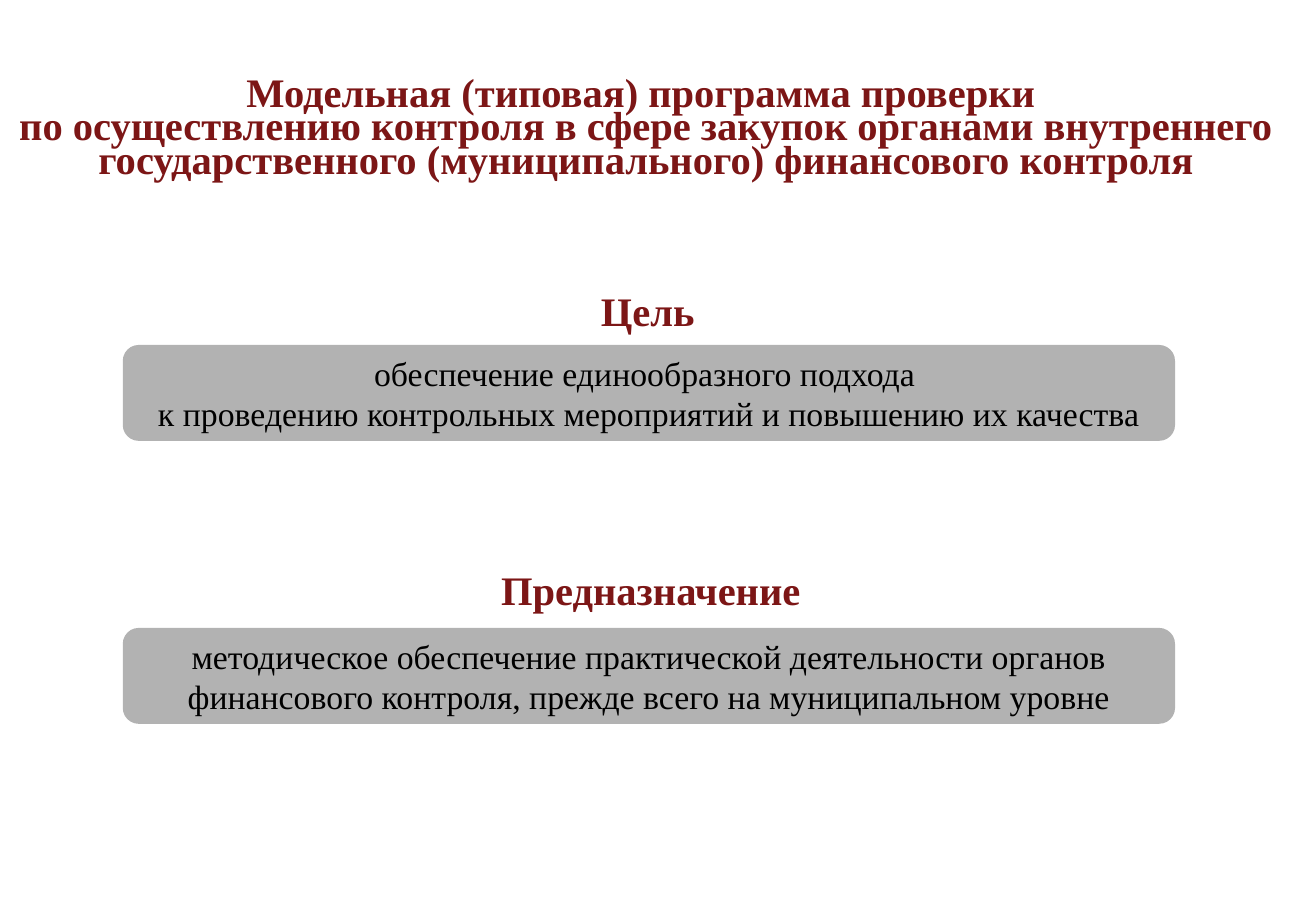
from pptx import Presentation, util as u
from pptx.dml.color import RGBColor
from pptx.enum import shapes, text

MAROON = RGBColor(0x7C, 0x16, 0x16)
GRAY = RGBColor(0xB2, 0xB2, 0xB2)
BLACK = RGBColor(0, 0, 0)

presentation = Presentation()
presentation.slide_width = u.Inches(10.83)
presentation.slide_height = u.Inches(7.5)
slide = presentation.slides.add_slide(presentation.slide_layouts[5])


def percent_box(left, top, width, height):
    sides = (presentation.slide_width, presentation.slide_height) * 2
    return [round(side * share / 100) for side, share in zip(sides, (left, top, width, height))]


def write(shape, lines, size, color, bold, align):
    frame = shape.text_frame
    frame.word_wrap = True
    for index, line in enumerate(lines):
        paragraph = frame.add_paragraph() if index else frame.paragraphs[0]
        paragraph.alignment = align
        run = paragraph.add_run()
        run.text = line
        run.font.name = "Times New Roman"
        run.font.size = u.Pt(size)
        run.font.bold = bold
        run.font.color.rgb = color


title = slide.shapes.title
title.left, title.top, title.width, title.height = percent_box(0, 8.27, 98.15, 12.53)
title.text_frame.auto_size = text.MSO_AUTO_SIZE.NONE
title.text_frame.vertical_anchor = text.MSO_ANCHOR.TOP
write(title, [
    "Модельная (типовая) программа проверки ",
    "по осуществлению контроля в сфере закупок органами внутреннего "
    "государственного (муниципального) финансового контроля",
], 24, MAROON, True, text.PP_ALIGN.CENTER)
for paragraph in title.text_frame.paragraphs:
    paragraph.line_spacing = u.Pt(20)

sections = [
    ("Цель", (44.51, 30.4, 9.55, 7.33), 37.87, [
        "обеспечение единообразного подхода ",
        "к проведению контрольных мероприятий и повышению их качества",
    ]),
    ("Предназначение", (36.93, 61.07, 26.13, 7.33), 68.93, [
        "методическое обеспечение практической деятельности органов "
        "финансового контроля, прежде всего на муниципальном уровне",
    ]),
]

for heading, heading_box, panel_top, lines in sections:
    panel = slide.shapes.add_shape(
        shapes.MSO_SHAPE.ROUNDED_RECTANGLE, *percent_box(9.33, panel_top, 79.96, 10.53))
    panel.fill.solid()
    panel.fill.fore_color.rgb = GRAY
    write(panel, lines, 20, BLACK, False, text.PP_ALIGN.CENTER)

    label = slide.shapes.add_shape(
        shapes.MSO_SHAPE.ROUNDED_RECTANGLE, *percent_box(*heading_box))
    label.fill.background()
    write(label, [heading], 24, MAROON, True, text.PP_ALIGN.JUSTIFY)

    for shape in (panel, label):
        shape.shadow.inherit = False
        shape.line.fill.background()
        shape.text_frame.vertical_anchor = text.MSO_ANCHOR.MIDDLE

presentation.save("out.pptx")
